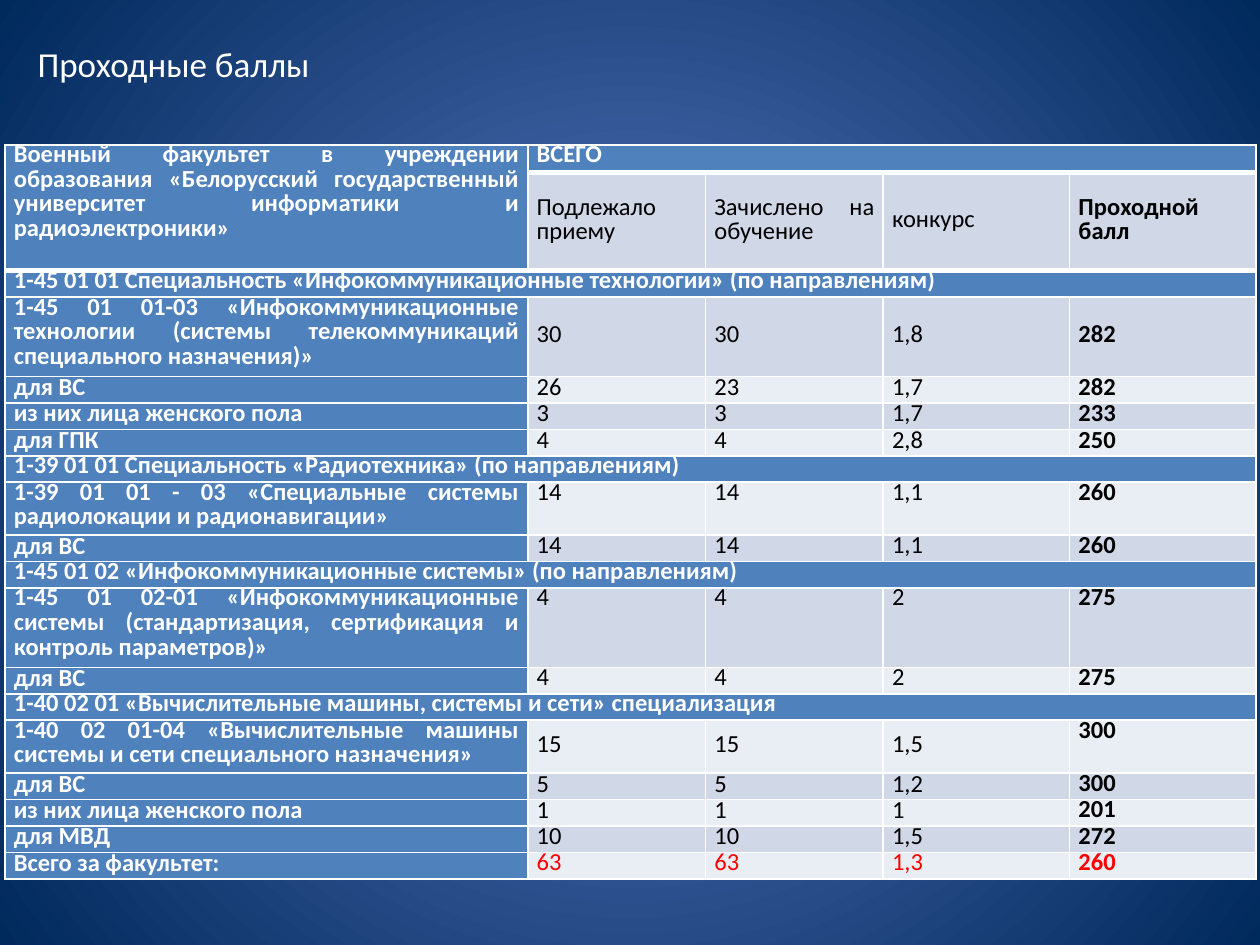
from lxml import etree
from pptx import Presentation
from pptx.dml.color import RGBColor as RGB
from pptx.enum.text import MSO_ANCHOR as Anchor, PP_ALIGN as Align
from pptx.oxml import parse_xml
from pptx.oxml.ns import nsdecls, qn
from pptx.util import Inches, Pt

BLUE, WHITE, BLACK, RED = "4F81BD", "FFFFFF", "000000", "FF0000"
BANDS = ["E9EDF4", "D0D8E8"]


def style(par, tone, **fmt):
    """Set the font of a paragraph."""
    for key, val in {"name": "Calibri", **fmt}.items():
        setattr(par.font, key, val)
    par.font.color.rgb = RGB.from_string(tone)


def border(cell, low):
    """Draw white lines around a cell, the bottom one low points wide."""
    props = cell._tc.get_or_add_tcPr()
    for pos, (side, width) in enumerate([("L", 1), ("R", 1), ("T", 1), ("B", low)]):
        props.insert(pos, parse_xml(
            f'<a:ln{side} {nsdecls("a")} w="{Pt(width)}"><a:solidFill>'
            f'<a:srgbClr val="{WHITE}"/></a:solidFill></a:ln{side}>'))


prs = Presentation()
prs.slide_width, prs.slide_height = Inches(10), Inches(7.5)
slide = prs.slides.add_slide(prs.slide_layouts[6])

# Background: radial gradient from the centre
fill = slide.background.fill
fill.gradient()
for stop, (pos, tone) in zip(fill.gradient_stops, [(0, "5E7CC5"), (1, "00295C")]):
    stop.position = pos
    stop.color.rgb = RGB.from_string(tone)
grad = slide.element.find(".//" + qn("a:gradFill"))
grad.remove(grad.find(qn("a:lin")))
ring = etree.SubElement(grad, qn("a:path"), {"path": "circle"})
etree.SubElement(ring, qn("a:fillToRect"), dict.fromkeys("ltrb", "50000"))

# Title
box = slide.shapes.add_textbox(Inches(0.2), Inches(0.29), Inches(2.38), Inches(0.44))
box.text_frame.word_wrap = False
box.text_frame.text = "Проходные баллы"
style(box.text_frame.paragraphs[0], WHITE, size=Pt(20))

# Rows: lines of text, label, values, anchors of the values (m middle, t top)
rows = [
    (1, "Военный факультет в учреждении образования «Белорусский государственный "
        "университет информатики и радиоэлектроники»", ["ВСЕГО"], "t"),
    (2, "", ["Подлежало приему", "Зачислено на обучение", "конкурс",
             "Проходной\nбалл"], "mmmm"),
    (1, "1-45 01 01 Специальность «Инфокоммуникационные технологии» "
        "(по направлениям)", [], ""),
    (3, "1-45 01 01-03 «Инфокоммуникационные технологии (системы "
        "телекоммуникаций специального назначения)»",
     ["30", "30", "1,8", "282"], "mmmm"),
    (1, "для ВС", ["26", "23", "1,7", "282"], "mmmm"),
    (1, "из них лица женского пола", ["3", "3", "1,7", "233"], "mmmm"),
    (1, "для ГПК", ["4", "4", "2,8", "250"], "mmmm"),
    (1, "1-39 01 01 Специальность «Радиотехника» (по направлениям)", [], ""),
    (2, "1-39 01 01 - 03 «Специальные системы радиолокации и радионавигации»",
     ["14", "14", "1,1", "260"], "tttt"),
    (1, "для ВС", ["14", "14", "1,1", "260"], "tttt"),
    (1, "1-45 01 02 «Инфокоммуникационные системы» (по направлениям)", [], ""),
    (3, "1-45 01 02-01 «Инфокоммуникационные системы (стандартизация, "
        "сертификация и контроль параметров)»", ["4", "4", "2", "275"], "tttt"),
    (1, "для ВС", ["4", "4", "2", "275"], "tttt"),
    (1, "1-40 02 01 «Вычислительные машины, системы и сети» специализация", [], ""),
    (2, "1-40 02 01-04 «Вычислительные машины системы и сети специального "
        "назначения»", ["15", "15", "1,5", "300"], "mmmt"),
    (1, "для ВС", ["5", "5", "1,2", "300"], "mmmt"),
    (1, "из них лица женского пола", ["1", "1", "1", "201"], "mmmt"),
    (1, "для МВД", ["10", "10", "1,5", "272"], "ttmt"),
    (1, "Всего за факультет:", ["63", "63", "1,3", "260"], "tttt"),
]
last = len(rows) - 1

# Table grid
table = slide.shapes.add_table(len(rows), 5, Inches(0.04), Inches(1.15),
                               Inches(9.92), Inches(5.64)).table
for col, width in zip(table.columns, [4.15, 1.41, 1.41, 1.48, 1.48]):
    col.width = Inches(width)
for row, (lines, *_) in zip(table.rows, rows):
    row.height = Inches(0.21 * lines)
table.rows[0].height, table.rows[1].height = Inches(0.22), Inches(0.46)

# Merged cells: the header and the section rows
table.cell(0, 0).merge(table.cell(1, 0))
table.cell(0, 1).merge(table.cell(0, 4))
for r, (_, _, vals, _) in enumerate(rows):
    if not vals:
        table.cell(r, 0).merge(table.cell(r, 4))

# Cell text and look
frame = {"margin_left": Inches(0.07), "margin_right": Inches(0.07),
         "margin_top": 0, "margin_bottom": 0}
for r, (_, label, vals, marks) in enumerate(rows):
    marks = ("t" if "«" in label else "m") + marks
    texts = [label, *vals]
    for c in range(5):
        cell = table.cell(r, c)
        head = c == 0 or r == 0 or not vals
        cell.fill.solid()
        cell.fill.fore_color.rgb = RGB.from_string(BLUE if head else BANDS[r % 2])
        border(cell, 3 if r < 2 else 1)
        if cell.is_spanned:
            continue
        for key, val in frame.items():
            setattr(cell, key, val)
        cell.vertical_anchor = Anchor.MIDDLE if marks[c] == "m" else Anchor.TOP
        cell.text = texts[c]
        tone = WHITE if head else RED if r == last else BLACK
        for par in cell.text_frame.paragraphs:
            par.alignment, par.line_spacing = Align.JUSTIFY, Pt(14)
            style(par, tone, size=Pt(14), bold=head or c == 4)

prs.save("out.pptx")
